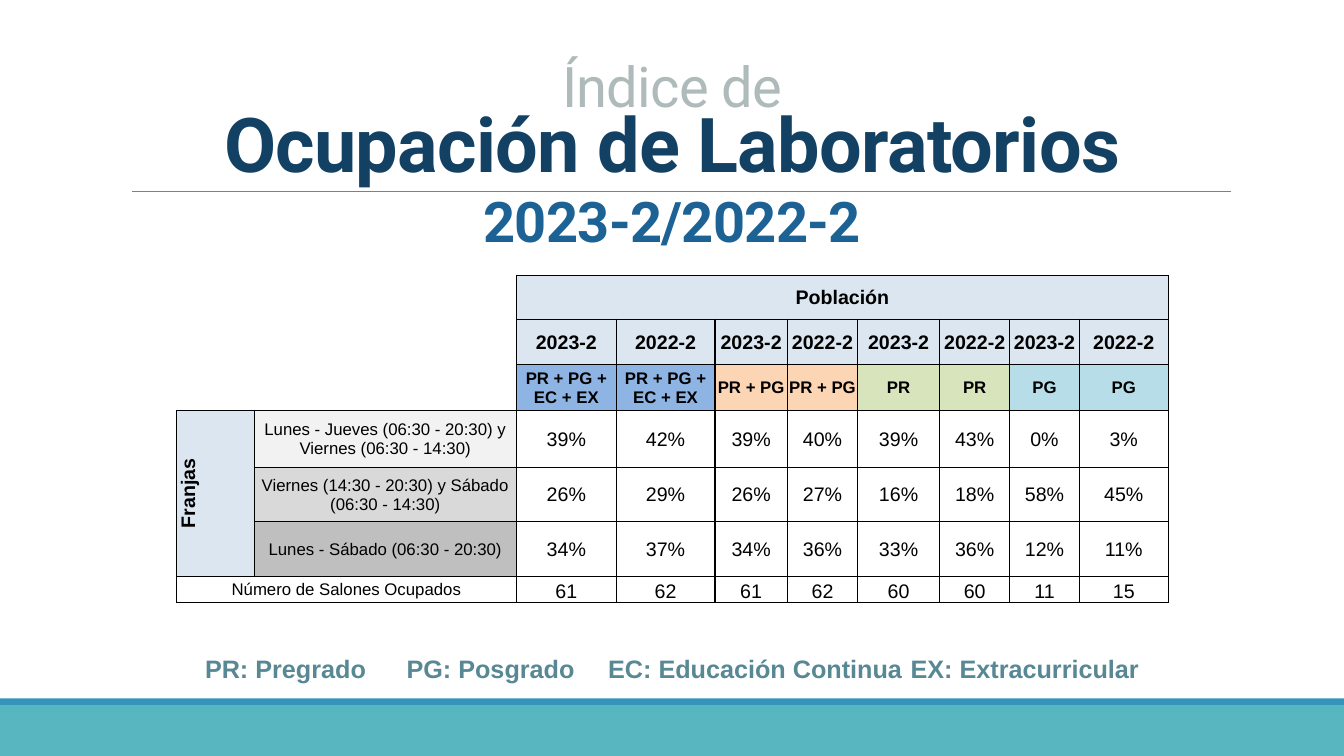
from lxml.etree import SubElement
from pptx import Presentation
from pptx.dml.color import RGBColor
from pptx.enum.shapes import MSO_CONNECTOR, MSO_SHAPE
from pptx.enum.text import MSO_ANCHOR, PP_ALIGN
from pptx.oxml.ns import qn
from pptx.util import Pt

PX = 9525  # EMU per px, 96 px to the inch
SLIDE_W, SLIDE_H = 1280, 720

COLORS = {
    "white": "FFFFFF", "black": "000000", "rule": "808080",
    "band": "58B6C0", "band_edge": "3494BA", "legend": "588894",
    "overline": "AFBABB", "title": "134163", "period": "1D6294",
    "header": "DCE6F1", "all": "8DB4E2", "degrees": "FCD5B4",
    "undergraduate": "D8E4BC", "postgraduate": "B7DEE8",
    "slot_1": "F2F2F2", "slot_2": "D9D9D9", "slot_3": "BFBFBF",
}

COLUMN_WIDTHS = [74, 250, 95, 94, 69, 67, 78, 67, 66, 85]
ROW_HEIGHTS = [42, 43, 44, 54, 52, 52, 25]
LABEL_COLUMNS, HEADER_ROWS = 2, 3
TOTAL_ROW = len(ROW_HEIGHTS) - 1
TERMS = ["2023-2", "2022-2"]
POPULATIONS = [
    ("PR + PG + EC + EX", "all"),
    ("PR + PG", "degrees"),
    ("PR", "undergraduate"),
    ("PG", "postgraduate"),
]
SLOTS = [
    ("Lunes - Jueves (06:30 - 20:30) y Viernes (06:30 - 14:30)", "slot_1",
     [39, 42, 39, 40, 39, 43, 0, 3]),
    ("Viernes (14:30 - 20:30) y Sábado (06:30 - 14:30)", "slot_2",
     [26, 29, 26, 27, 16, 18, 58, 45]),
    ("Lunes - Sábado (06:30 - 20:30)", "slot_3",
     [34, 37, 34, 36, 33, 36, 12, 11]),
]
ROOMS_USED = [61, 62, 61, 62, 60, 60, 11, 15]


def rgb(name):
    return RGBColor.from_string(COLORS[name])


def emu(*lengths):
    return [length * PX for length in lengths]


def format_paragraph(paragraph, size, color="black", bold=False, font="Arial"):
    paragraph.alignment = PP_ALIGN.CENTER
    for run in paragraph.runs:
        run.font.name = font
        run.font.size = Pt(size)
        run.font.bold = bold
        run.font.color.rgb = rgb(color)


def add_footer_band(slide, left, top, width, height):
    edge = 7
    for y, h, color in [(top + edge, height - edge, "band"), (top, edge, "band_edge")]:
        band = slide.shapes.add_shape(MSO_SHAPE.RECTANGLE, *emu(left, y, width, h))
        band.shadow.inherit = False
        band.fill.solid()
        band.fill.fore_color.rgb = rgb(color)
        band.line.fill.background()


def add_title(slide, left, top, width, height):
    # Rule between the title and the period
    rule_y = top + 133
    rule = slide.shapes.add_connector(
        MSO_CONNECTOR.STRAIGHT, *emu(left + 126, rule_y, left + 1172, rule_y))
    rule.line.color.rgb = rgb("rule")
    rule.line.width = Pt(0.5)
    SubElement(rule._element.spPr, qn("a:effectLst"))

    # Three title lines
    heading = slide.shapes.add_textbox(*emu(left, top, width, height)).text_frame
    heading.word_wrap = True
    heading.vertical_anchor = MSO_ANCHOR.BOTTOM
    heading.text = "Índice de\nOcupación de Laboratorios\n2023-2/2022-2"
    styles = [(40, "overline", False, 0.75), (54, "title", True, 0.75),
              (40, "period", True, 1.0)]
    for paragraph, (size, color, bold, spacing) in zip(heading.paragraphs, styles):
        format_paragraph(paragraph, size, color, bold, "Roboto")
        paragraph.line_spacing = spacing
        paragraph.runs[0].font._element.set("spc", "-50")


def set_borders(cell, row, column):
    in_corner = row < HEADER_ROWS and column < LABEL_COLUMNS
    bottom = row + 1
    label_top = HEADER_ROWS if column < LABEL_COLUMNS else 0
    thick_rows = {0, 1, label_top, TOTAL_ROW + 1}
    # Side: (thick line, visible)
    sides = {
        "L": (column % 2 == 0, not in_corner),
        "R": (column % 2 == 1, not in_corner or column == LABEL_COLUMNS - 1),
        "T": (row in thick_rows, not in_corner),
        "B": (bottom in thick_rows, not in_corner or bottom == HEADER_ROWS),
    }
    properties = cell._tc.get_or_add_tcPr()
    for side, (thick, visible) in sides.items():
        line = SubElement(properties, qn(f"a:ln{side}"), w=str(Pt(1 if thick else 0.5)))
        if visible:
            fill = SubElement(line, qn("a:solidFill"))
            SubElement(fill, qn("a:srgbClr"), val=COLORS["black"])
        else:
            SubElement(line, qn("a:noFill"))


def write_cell(cell, text, size, fill="white", bold=False):
    cell.text = text
    format_paragraph(cell.text_frame.paragraphs[0], size, bold=bold)
    cell.fill.solid()
    cell.fill.fore_color.rgb = rgb(fill)


def add_occupancy_table(slide, left, top):
    table = slide.shapes.add_table(
        len(ROW_HEIGHTS), len(COLUMN_WIDTHS),
        *emu(left, top, sum(COLUMN_WIDTHS), sum(ROW_HEIGHTS))).table
    table.first_row = table.horz_banding = False
    for column, width in zip(table.columns, COLUMN_WIDTHS):
        column.width = width * PX
    for row, height in zip(table.rows, ROW_HEIGHTS):
        row.height = height * PX

    # Borders, margins and white ground
    for r in range(len(ROW_HEIGHTS)):
        for c in range(len(COLUMN_WIDTHS)):
            cell = table.cell(r, c)
            set_borders(cell, r, c)
            cell.margin_left = cell.margin_right = cell.margin_top = PX
            cell.margin_bottom = 0
            counts = r == TOTAL_ROW and c >= LABEL_COLUMNS
            cell.vertical_anchor = MSO_ANCHOR.BOTTOM if counts else MSO_ANCHOR.MIDDLE
            cell.fill.solid()
            cell.fill.fore_color.rgb = rgb("white")

    # Merged headings
    population = table.cell(0, LABEL_COLUMNS)
    population.merge(table.cell(0, len(COLUMN_WIDTHS) - 1))
    write_cell(population, "Población", 14, "header", True)
    slots = table.cell(HEADER_ROWS, 0)
    slots.merge(table.cell(TOTAL_ROW - 1, 0))
    write_cell(slots, "Franjas", 14, "header", True)
    slots._tc.get_or_add_tcPr().set("vert", "vert270")
    rooms = table.cell(TOTAL_ROW, 0)
    rooms.merge(table.cell(TOTAL_ROW, 1))
    write_cell(rooms, "Número de Salones Ocupados", 12)

    # Terms, populations and room counts
    for i, count in enumerate(ROOMS_USED):
        column = LABEL_COLUMNS + i
        group, color = POPULATIONS[i // len(TERMS)]
        write_cell(table.cell(1, column), TERMS[i % len(TERMS)], 14, "header", True)
        write_cell(table.cell(2, column), group, 12, color, True)
        write_cell(table.cell(TOTAL_ROW, column), str(count), 14)

    # Time slots and their occupancy
    for r, (slot, color, shares) in enumerate(SLOTS, HEADER_ROWS):
        write_cell(table.cell(r, 1), slot, 12, color)
        for c, share in enumerate(shares, LABEL_COLUMNS):
            write_cell(table.cell(r, c), f"{share}%", 14)


def add_legend(slide, left, top, width, height):
    legend = slide.shapes.add_textbox(*emu(left, top, width, height)).text_frame
    legend.word_wrap = True
    legend.text = "PR: Pregrado\tPG: Posgrado\tEC: Educación Continua\tEX: Extracurricular"
    paragraph = legend.paragraphs[0]
    format_paragraph(paragraph, 18, "legend", True)
    stops = SubElement(paragraph._p.get_or_add_pPr(), qn("a:tabLst"))
    for position in emu(192, 384, 672):
        SubElement(stops, qn("a:tab"), pos=str(position), algn="l")


def main():
    presentation = Presentation()
    presentation.slide_width, presentation.slide_height = emu(SLIDE_W, SLIDE_H)
    slide = presentation.slides.add_slide(presentation.slide_layouts[6])
    add_footer_band(slide, 0, 665, SLIDE_W, 55)
    add_legend(slide, 136, 617, 1008, 38)
    add_occupancy_table(slide, 168, 262)
    add_title(slide, 0, 49, SLIDE_W, 197)
    presentation.save("out.pptx")


if __name__ == "__main__":
    main()
